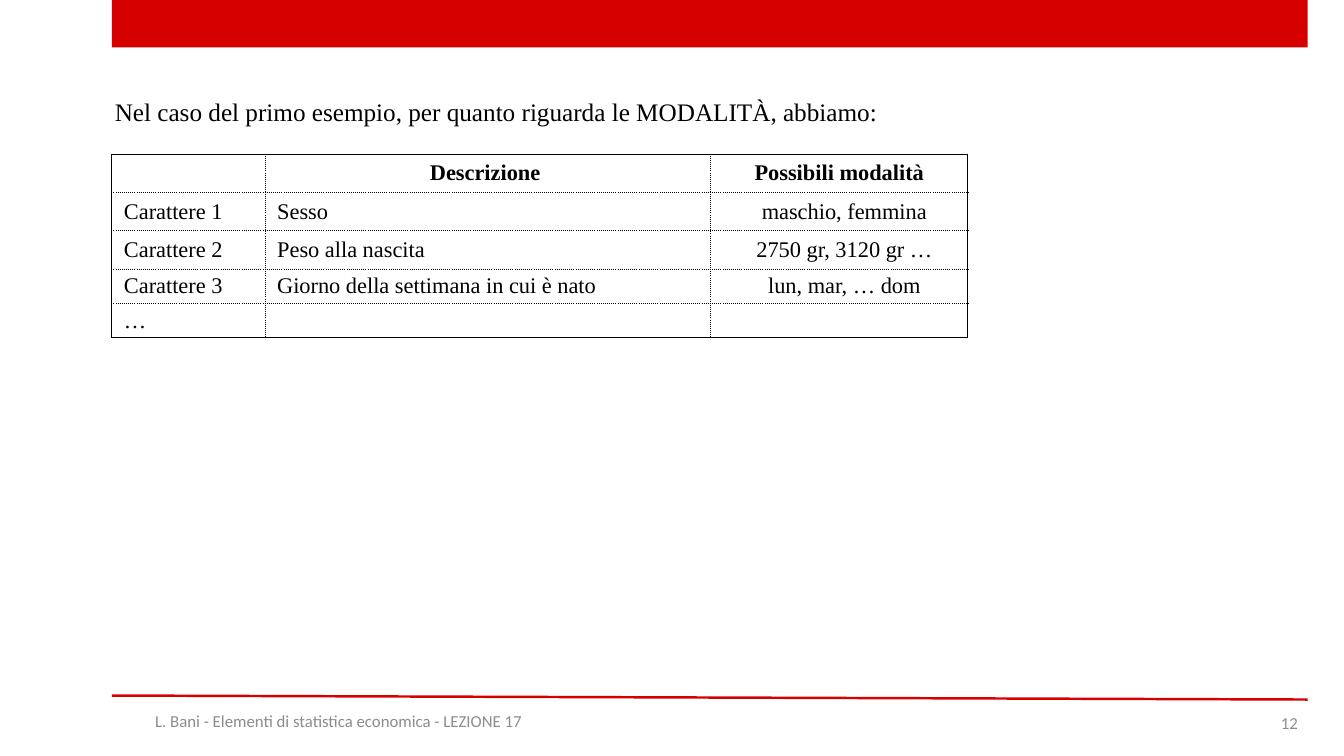
from dataclasses import dataclass

from pptx import Presentation
from pptx import util as u
from pptx.dml.color import RGBColor
from pptx.enum import shapes, text
from pptx.oxml import xmlchemy as xc

RED, BLACK, GRAY = "D60000", "000000", "8C8C8C"
SERIF, SANS = "Times New Roman", "Calibri"
AL = text.PP_ALIGN
MIDDLE = text.MSO_ANCHOR.MIDDLE
LEFT, RIGHT = 1.11, 12.97


@dataclass
class Label:
    text: str
    left: float
    top: float
    width: float
    align: AL
    anchor: text.MSO_ANCHOR
    fmt: dict


HEADER = {"name": SERIF, "size": u.Pt(16), "bold": True}
BODY = {**HEADER, "bold": False}
FOOTER = {"name": SANS, "size": u.Pt(12)}
LABELS = [
    Label("Nel caso del primo esempio, per quanto riguarda le MODALITÀ, abbiamo:",
          1.04, 0.91, 10, AL.JUSTIFY, text.MSO_ANCHOR.TOP,
          {"name": SERIF, "size": u.Pt(18)}),
    Label("L. Bani - Elementi di statistica economica - LEZIONE 17",
          LEFT, 6.95, 4.5, AL.CENTER, MIDDLE, FOOTER),
    Label("12", RIGHT - 3, 6.97, 3, AL.RIGHT, MIDDLE, FOOTER),
]
COLS = [1.52, 4.42, 2.55]
ROW_HEIGHTS = [0.38, 0.38, 0.38, 0.34, 0.34]
ROWS = [
    ["", "Descrizione ", "Possibili modalità"],
    ["Carattere 1", "Sesso", "maschio, femmina"],
    ["Carattere 2", "Peso alla nascita", "2750 gr, 3120 gr …"],
    ["Carattere 3", "Giorno della settimana in cui è nato", "lun, mar, … dom"],
    ["…", "", ""],
]


def rgb(value: str) -> RGBColor:
    return RGBColor.from_string(value)


def write(p, content: str, align: AL, fmt: dict, color: str) -> None:
    p.alignment = align
    r = p.add_run()
    r.text = content
    for key, value in fmt.items():
        setattr(r.font, key, value)
    r.font.color.rgb = rgb(color)


def add_label(slide, label: Label) -> None:
    box = slide.shapes.add_textbox(*map(u.Inches, (label.left, label.top, label.width, 0.4)))
    tf = box.text_frame
    tf.word_wrap = True
    tf.vertical_anchor = label.anchor
    color = GRAY if label.fmt is FOOTER else BLACK
    write(tf.paragraphs[0], label.text, label.align, label.fmt, color)


def add_borders(cell, solid: dict[str, bool]) -> None:
    """Draw each side solid or dotted; the lines go before the cell's fill."""
    tc_pr = cell._tc.get_or_add_tcPr()
    for i, (side, is_solid) in enumerate(solid.items()):
        ln = xc.OxmlElement(f"a:ln{side}")
        ln.set("w", str(u.Pt(1)))
        fill = xc.OxmlElement("a:solidFill")
        clr = xc.OxmlElement("a:srgbClr")
        clr.set("val", BLACK)
        fill.append(clr)
        dash = xc.OxmlElement("a:prstDash")
        dash.set("val", "solid" if is_solid else "sysDot")
        ln.extend([fill, dash])
        tc_pr.insert(i, ln)


def fill_cell(cell, row: int, col: int) -> None:
    for side in ("left", "right", "top", "bottom"):
        setattr(cell, f"margin_{side}", u.Inches(0.02))
    cell.vertical_anchor = MIDDLE
    cell.fill.background()
    last_row, last_col = len(ROWS) - 1, len(COLS) - 1
    add_borders(cell, {"L": col == 0, "R": col == last_col,
                       "T": row == 0, "B": row == last_row})
    p = cell.text_frame.paragraphs[0]
    content = ROWS[row][col]
    if not content:
        end = xc.OxmlElement("a:endParaRPr")
        end.set("sz", "1600")
        p._p.append(end)
        return
    centred = row == 0 or col == last_col
    write(p, content, AL.CENTER if centred else AL.JUSTIFY,
          BODY if row else HEADER, BLACK)
    if row:
        p_pr = p._p.get_or_add_pPr()
        p_pr.set("marL", str(u.Inches(0.1)))
        p_pr.set("indent", "0")


def add_modality_table(slide) -> None:
    frame = slide.shapes.add_table(
        len(ROWS), len(COLS),
        *map(u.Inches, (LEFT, 1.53, sum(COLS), sum(ROW_HEIGHTS))))
    table = frame.table
    table.first_row = table.horz_banding = False
    for column, width in zip(table.columns, COLS):
        column.width = u.Inches(width)
    for i, height in enumerate(ROW_HEIGHTS):
        table.rows[i].height = u.Inches(height)
        for j in range(len(COLS)):
            fill_cell(table.cell(i, j), i, j)


def add_frame(slide) -> None:
    """Draw the red band at the top and the red rule above the footer."""
    sp = slide.shapes.add_shape(shapes.MSO_SHAPE.RECTANGLE,
                                *map(u.Inches, (LEFT, 0, RIGHT - LEFT, 0.47)))
    sp.shadow.inherit = False
    sp.fill.solid()
    sp.fill.fore_color.rgb = rgb(RED)
    sp.line.fill.background()
    rule = slide.shapes.add_connector(shapes.MSO_CONNECTOR.STRAIGHT,
                                      *map(u.Inches, (LEFT, 6.9, RIGHT, 6.94)))
    rule.line.color.rgb = rgb(RED)
    rule.line.width = u.Pt(1.75)
    rule._element.spPr.append(xc.OxmlElement("a:effectLst"))


def main() -> None:
    prs = Presentation()
    prs.slide_width, prs.slide_height = u.Inches(13.33), u.Inches(7.5)
    slide = prs.slides.add_slide(prs.slide_layouts[6])
    add_frame(slide)
    add_modality_table(slide)
    for label in LABELS:
        add_label(slide, label)
    prs.save("out.pptx")


if __name__ == "__main__":
    main()
